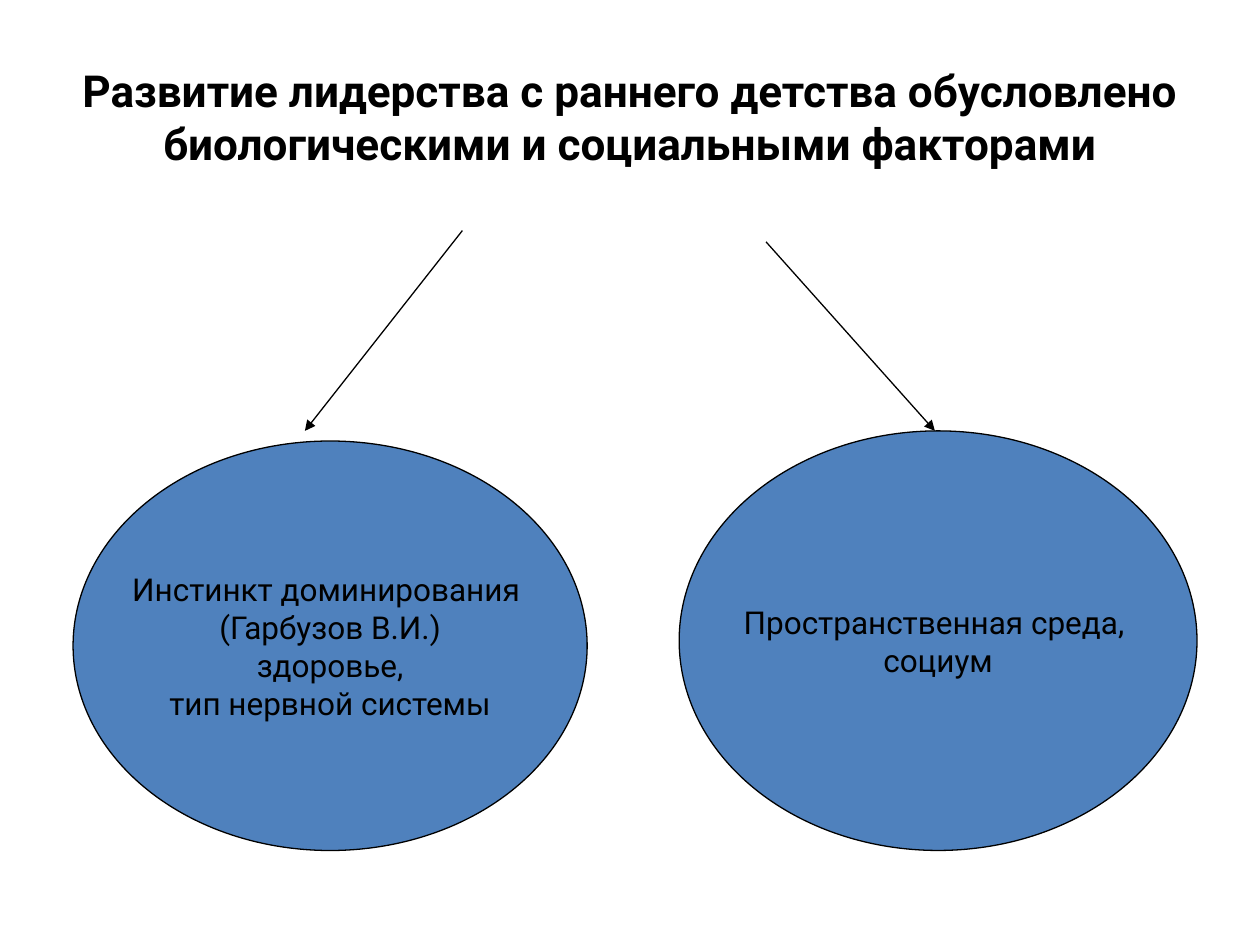
from dataclasses import dataclass
from typing import NamedTuple

from lxml.etree import SubElement
from pptx import Presentation
from pptx.dml.color import RGBColor
from pptx.enum.shapes import MSO_CONNECTOR as Connector, MSO_SHAPE as Shape
from pptx.enum.text import MSO_ANCHOR as Anchor, MSO_AUTO_SIZE as AutoSize, PP_ALIGN as Align
from pptx.oxml.ns import qn
from pptx.util import Inches, Pt


@dataclass(frozen=True)
class Theme:
    font: str = "Roboto"
    ink: RGBColor = RGBColor(0x00, 0x00, 0x00)
    fill: RGBColor = RGBColor(0x4F, 0x81, 0xBD)
    title_size: float = 25.2
    body_size: float = 18
    line_width: float = 0.75


class Factor(NamedTuple):
    left: float
    top: float
    width: float
    height: float
    lines: tuple[str, ...]


class Arrow(NamedTuple):
    start: tuple[float, float]
    end: tuple[float, float]


THEME = Theme()
TITLE = "Развитие лидерства с раннего детства обусловлено биологическими и социальными факторами"
FACTORS = (
    Factor(5.39, 3.42, 4.11, 3.33, ("Пространственная среда, ", "социум")),
    Factor(0.58, 3.5, 4.08, 3.25, (
        "Инстинкт доминирования ",
        "(Гарбузов В.И.)",
        "здоровье,",
        "тип нервной системы",
    )),
)
ARROWS = (
    Arrow((3.67, 1.83), (2.42, 3.42)),
    Arrow((6.08, 1.92), (7.42, 3.42)),
)


def style_text(frame, size: float, bold: bool = False) -> None:
    frame.vertical_anchor = Anchor.MIDDLE
    for para in frame.paragraphs:
        para.alignment = Align.CENTER
        for span in para.runs:
            span.font.name = THEME.font
            span.font.size = Pt(size)
            span.font.bold = bold
            span.font.color.rgb = THEME.ink


def style_line(line) -> None:
    line.color.rgb = THEME.ink
    line.width = Pt(THEME.line_width)


def add_title(slide, text: str) -> None:
    title = slide.shapes.title
    title.left, title.top = Inches(0.5), Inches(0.3)
    title.width, title.height = Inches(9), Inches(1.25)
    frame = title.text_frame
    frame.text = text
    frame.word_wrap = True
    frame.auto_size = AutoSize.NONE
    style_text(frame, THEME.title_size, bold=True)


def add_arrow(slide, arrow: Arrow) -> None:
    ends = [Inches(value) for value in (*arrow.start, *arrow.end)]
    connector = slide.shapes.add_connector(Connector.STRAIGHT, *ends)
    style_line(connector.line)
    SubElement(connector.line._get_or_add_ln(), qn("a:tailEnd"), type="triangle")
    SubElement(connector._element.spPr, qn("a:effectLst"))


def add_factor(slide, factor: Factor) -> None:
    bounds = [Inches(value) for value in factor[:4]]
    ellipse = slide.shapes.add_shape(Shape.OVAL, *bounds)
    ellipse.shadow.inherit = False
    ellipse.fill.solid()
    ellipse.fill.fore_color.rgb = THEME.fill
    style_line(ellipse.line)
    frame = ellipse.text_frame
    frame.text = "\n".join(factor.lines)
    frame.word_wrap = False
    style_text(frame, THEME.body_size)


def main() -> None:
    deck = Presentation()
    deck.slide_width, deck.slide_height = Inches(10), Inches(7.5)
    slide = deck.slides.add_slide(deck.slide_layouts[5])
    add_title(slide, TITLE)
    for arrow in ARROWS:
        add_arrow(slide, arrow)
    for factor in FACTORS:
        add_factor(slide, factor)
    deck.save("out.pptx")


if __name__ == "__main__":
    main()
